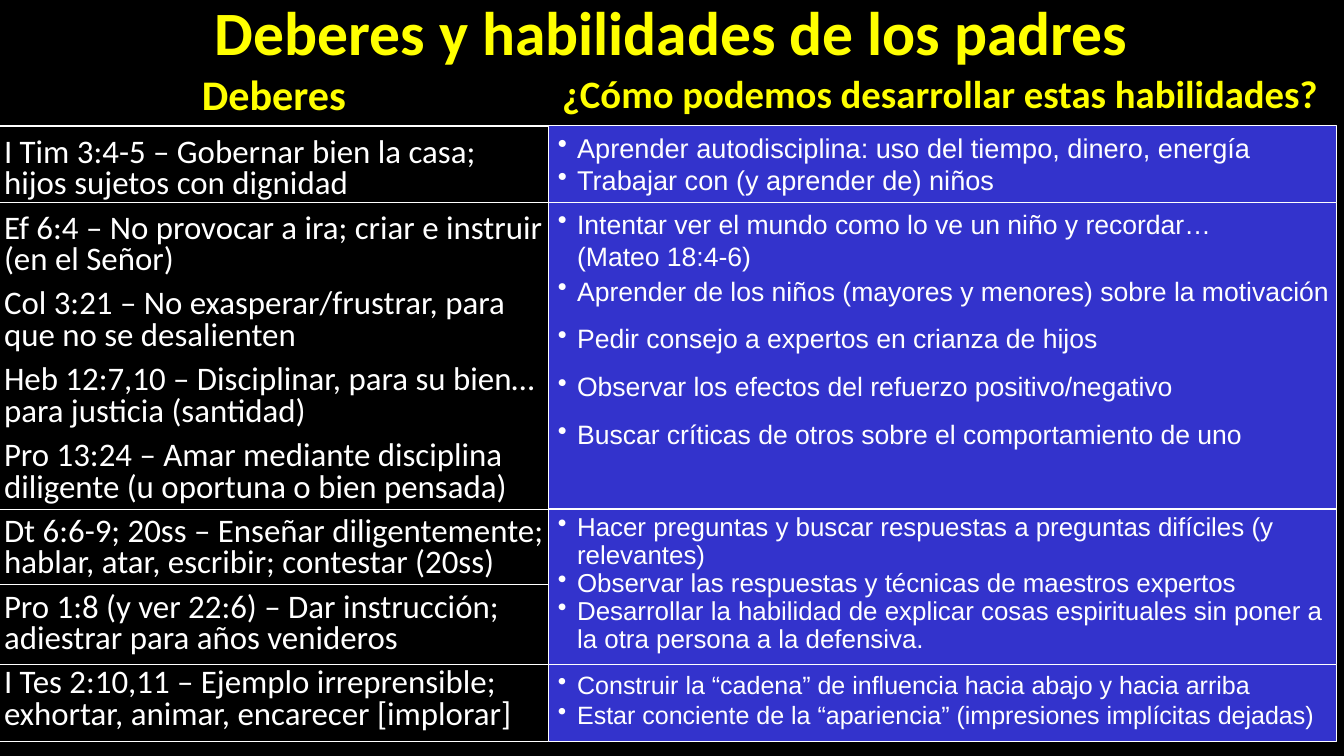
"""Build the slide on the duties and abilities of parents."""
from dataclasses import dataclass

from lxml import etree
from pptx import Presentation
from pptx import util as u
from pptx.dml.color import RGBColor
from pptx.enum import shapes, text
from pptx.oxml.ns import qn

BLACK = RGBColor(0x00, 0x00, 0x00)
WHITE = RGBColor(0xFF, 0xFF, 0xFF)
YELLOW = RGBColor(0xFF, 0xFF, 0x00)
BLUE = RGBColor(0x33, 0x33, 0xCC)

WIDTH, HEIGHT = 13.34, 7.5
SPLIT, RIGHT = 5.44, 13.27
ROW_EDGES = (1.25, 2.01, 5.05, 5.8, 6.59, 7.36)
HEADING_TOP, HEADING_HEIGHT = 0.73, 0.52
RULE_WEIGHT = u.Pt(0.75)
HANG = u.Inches(0.19)


@dataclass(frozen=True)
class Block:
    """Plain text in a box measured in inches."""
    lines: tuple[str, ...]
    left: float
    top: float
    width: float
    height: float
    size: float
    color: RGBColor = YELLOW
    bold: bool = True
    align: text.PP_ALIGN = text.PP_ALIGN.CENTER
    anchor: text.MSO_ANCHOR = text.MSO_ANCHOR.TOP
    inset: float = 0.1
    spacing: float = 0.8
    after: float = 9


@dataclass(frozen=True)
class Advice:
    """Bulleted panel between two row edges."""
    first_edge: int
    last_edge: int
    size: float
    points: tuple[str, ...]
    spacings: tuple[float, ...]


BLOCKS = (
    Block(("Deberes y habilidades de los padres",), 0, 0, WIDTH, 0.61, 44,
          anchor=text.MSO_ANCHOR.MIDDLE, spacing=1, after=0),
    Block(("Deberes",), 0, HEADING_TOP, SPLIT, HEADING_HEIGHT, 30.1),
    Block(("¿Cómo podemos desarrollar estas habilidades?",),
          SPLIT, HEADING_TOP, 7.79, HEADING_HEIGHT, 27.7),
    Block((
        "I Tim 3:4-5 – Gobernar bien la casa; \nhijos sujetos con dignidad",
        "Ef 6:4 – No provocar a ira; criar e instruir (en el Señor)",
        "Col 3:21 – No exasperar/frustrar, para que no se desalienten",
        "Heb 12:7,10 – Disciplinar, para su bien… para justicia (santidad)",
        "Pro 13:24 – Amar mediante disciplina diligente (u oportuna o bien pensada)",
        "Dt 6:6-9; 20ss – Enseñar diligentemente; hablar, atar, escribir; contestar (20ss)",
        "Pro 1:8 (y ver 22:6) – Dar instrucción; adiestrar para años venideros",
        "I Tes 2:10,11 – Ejemplo irreprensible; exhortar, animar, encarecer [implorar]",
    ), 0, 1.32, 5.53, 6.18, 23.5, WHITE, False, text.PP_ALIGN.LEFT, inset=0.04),
)

ADVICE = (
    Advice(0, 1, 19.4, (
        "Aprender autodisciplina: uso del tiempo, dinero, energía",
        "Trabajar con (y aprender de) niños",
    ), (1, 1)),
    Advice(1, 2, 19, (
        "Intentar ver el mundo como lo ve un niño y recordar…\n(Mateo 18:4-6)",
        "Aprender de los niños (mayores y menores) sobre la motivación",
        "Pedir consejo a expertos en crianza de hijos",
        "Observar los efectos del refuerzo positivo/negativo",
        "Buscar críticas de otros sobre el comportamiento de uno",
    ), (1, 1.1, 1.5, 1.5, 1.5)),
    Advice(2, 4, 18.5, (
        "Hacer preguntas y buscar respuestas a preguntas difíciles (y relevantes)",
        "Observar las respuestas y técnicas de maestros expertos",
        "Desarrollar la habilidad de explicar cosas espirituales sin poner a la otra "
        "persona a la defensiva.",
    ), (0.9, 0.9, 0.9)),
    Advice(4, 5, 17.9, (
        "Construir la “cadena” de influencia hacia abajo y hacia arriba",
        "Estar conciente de la “apariencia” (impresiones implícitas dejadas)",
    ), (1, 1)),
)


def fill_frame(frame, lines: tuple[str, ...], font_name: str, size: float,
               color: RGBColor, bold: bool, align: text.PP_ALIGN,
               spacings: tuple[float, ...]) -> list:
    """Write one paragraph per line and return the paragraphs."""
    frame.word_wrap = True
    frame.text = "\n".join("" for _ in lines)
    for paragraph, line, spacing in zip(frame.paragraphs, lines, spacings):
        paragraph.text = line.replace("\n", "\v")
        paragraph.alignment = align
        paragraph.line_spacing = float(spacing)
        font = paragraph.font
        font.name, font.size, font.bold = font_name, u.Pt(size), bold
        font.color.rgb = color
    return list(frame.paragraphs)


def draw_block(slide, block: Block) -> None:
    """Draw a title, heading or column of plain text."""
    box = slide.shapes.add_textbox(*map(u.Inches, (
        block.left, block.top, block.width, block.height)))
    frame = box.text_frame
    frame.margin_left = u.Inches(block.inset)
    frame.vertical_anchor = block.anchor
    for paragraph in fill_frame(frame, block.lines, "Calibri", block.size, block.color,
                                block.bold, block.align,
                                (block.spacing,) * len(block.lines)):
        paragraph.space_after = u.Pt(block.after)


def draw_rule(slide, edge: float) -> None:
    """Draw a row rule across the left column."""
    rule = slide.shapes.add_connector(shapes.MSO_CONNECTOR.STRAIGHT, *map(
        u.Inches, (0, edge, SPLIT, edge)))
    rule.line.color.rgb = WHITE
    rule.line.width = RULE_WEIGHT
    etree.SubElement(rule._element.spPr, qn("a:effectLst"))


def draw_advice(slide, advice: Advice) -> None:
    """Draw a bulleted panel in the right column."""
    top, bottom = ROW_EDGES[advice.first_edge], ROW_EDGES[advice.last_edge]
    panel = slide.shapes.add_shape(shapes.MSO_SHAPE.RECTANGLE, *map(
        u.Inches, (SPLIT, top, RIGHT - SPLIT, bottom - top)))
    panel.shadow.inherit = False
    panel.fill.solid()
    panel.fill.fore_color.rgb = BLUE
    panel.line.color.rgb = WHITE
    panel.line.width = RULE_WEIGHT
    frame = panel.text_frame
    frame.margin_right = u.Inches(0.05)
    frame.vertical_anchor = text.MSO_ANCHOR.TOP
    for paragraph in fill_frame(frame, advice.points, "Arial", advice.size, WHITE,
                                False, text.PP_ALIGN.LEFT, advice.spacings):
        properties = paragraph._p.get_or_add_pPr()
        properties.set("marL", str(HANG))
        properties.set("indent", str(-HANG))
        bullet = etree.Element(qn("a:buChar"), char="•")
        properties.find(qn("a:defRPr")).addprevious(bullet)


def main() -> None:
    """Assemble and save the slide."""
    deck = Presentation()
    deck.slide_width, deck.slide_height = u.Inches(WIDTH), u.Inches(HEIGHT)
    slide = deck.slides.add_slide(deck.slide_layouts[6])
    slide.background.fill.solid()
    slide.background.fill.fore_color.rgb = BLACK
    for block in BLOCKS:
        draw_block(slide, block)
    for edge in ROW_EDGES:
        draw_rule(slide, edge)
    for advice in ADVICE:
        draw_advice(slide, advice)
    deck.save("out.pptx")


if __name__ == "__main__":
    main()
